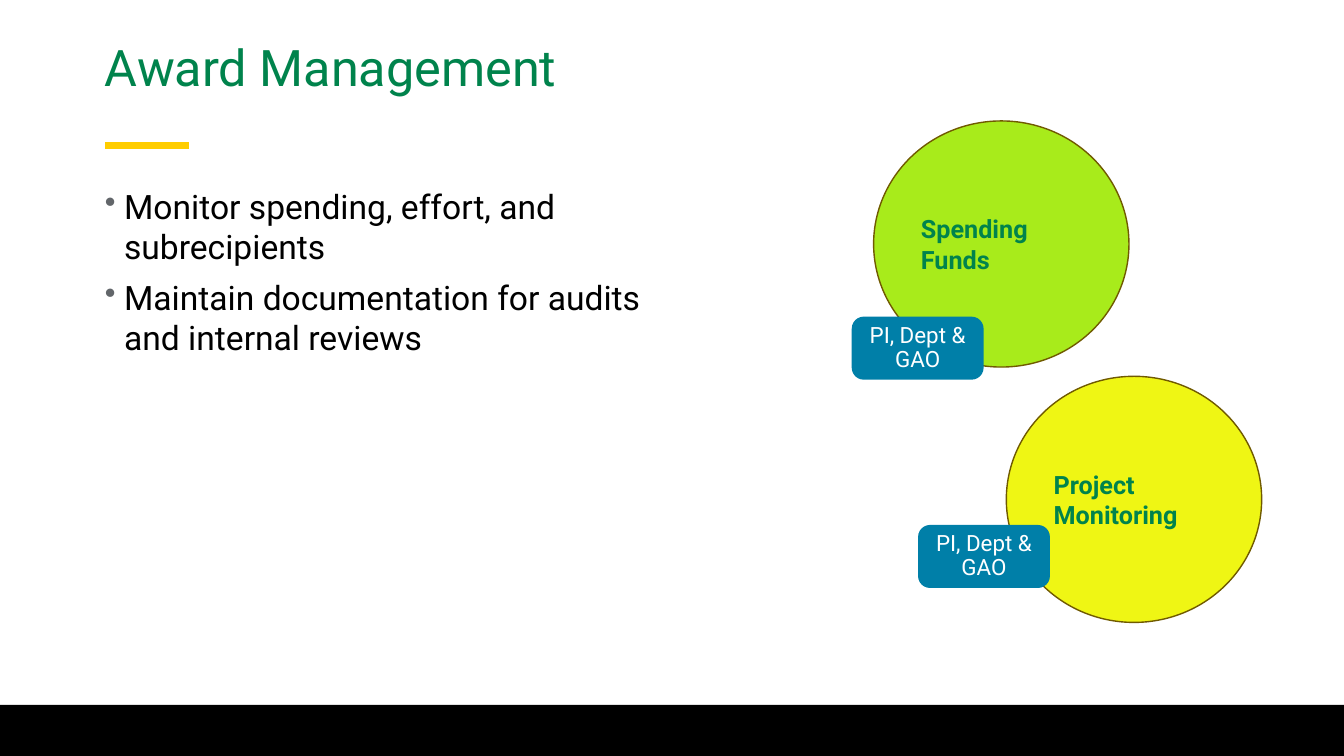
from dataclasses import dataclass

from lxml.etree import SubElement
from pptx import Presentation
from pptx.dml.color import RGBColor
from pptx.enum.shapes import MSO_CONNECTOR, MSO_SHAPE
from pptx.enum.text import MSO_ANCHOR, PP_ALIGN
from pptx.oxml.ns import qn
from pptx.util import Inches, Pt

SLIDE_WIDTH, SLIDE_HEIGHT = Inches(13.33), Inches(7.5)
COLUMNS, ROWS = 16, 9
MARGIN = 1.25  # columns
FONT = "Roboto"

GREEN = RGBColor(0x00, 0x83, 0x4C)
GOLD = RGBColor(0xFF, 0xCD, 0x00)
BLACK = RGBColor(0x00, 0x00, 0x00)
WHITE = RGBColor(0xFF, 0xFF, 0xFF)
LIME = RGBColor(0xA8, 0xEB, 0x1B)
YELLOW = RGBColor(0xEF, 0xF6, 0x14)
OLIVE = RGBColor(0x70, 0x5A, 0x00)
BLUE = RGBColor(0x00, 0x7F, 0xA8)
BULLET_GREY = "62666A"


@dataclass
class Area:
    """A rectangle in grid columns and rows."""
    column: float
    row: float
    columns: float
    rows: float

    def lengths(self) -> tuple[int, int, int, int]:
        return (across(self.column), down(self.row),
                across(self.columns), down(self.rows))


@dataclass
class Stage:
    """A circle for one stage, with a tag naming who is responsible."""
    label: str
    fill: RGBColor
    circle: Area
    tag: Area


BULLETS = ["Monitor spending, effort, and subrecipients",
           "Maintain documentation for audits and internal reviews"]
OWNERS = "PI, Dept & GAO"
STAGES = [
    Stage("Spending Funds", LIME,
          Area(10.4, 1.44, 3.04, 2.93), Area(10.14, 3.77, 1.57, 0.75)),
    Stage("Project Monitoring", YELLOW,
          Area(11.98, 4.48, 3.04, 2.93), Area(10.93, 6.25, 1.57, 0.75)),
]


def across(columns: float) -> int:
    return round(SLIDE_WIDTH * columns / COLUMNS)


def down(rows: float) -> int:
    return round(SLIDE_HEIGHT * rows / ROWS)


def set_margins(frame, margin: float) -> None:
    frame.margin_left = frame.margin_right = Inches(margin)
    frame.margin_top = frame.margin_bottom = Inches(margin)


def format_text(frame, size: float, color: RGBColor, bold: bool = False,
                align: PP_ALIGN = PP_ALIGN.LEFT, spacing: float = 1.0) -> None:
    frame.word_wrap = True
    for para in frame.paragraphs:
        para.alignment = align
        para.line_spacing = spacing
        for span in para.runs:
            span.font.name = FONT
            span.font.size = Pt(size)
            span.font.bold = bold
            span.font.color.rgb = color


def add_bullet(para) -> None:
    properties = para._p.get_or_add_pPr()
    properties.set("marL", str(Inches(0.19)))
    properties.set("indent", str(-Inches(0.19)))
    color = SubElement(properties, qn("a:buClr"))
    SubElement(color, qn("a:srgbClr"), val=BULLET_GREY)
    SubElement(properties, qn("a:buSzPct"), val="95000")
    SubElement(properties, qn("a:buChar"), char="•")


def add_filled(page, kind: MSO_SHAPE, area: Area, fill: RGBColor):
    shape = page.shapes.add_shape(kind, *area.lengths())
    shape.shadow.inherit = False
    shape.fill.solid()
    shape.fill.fore_color.rgb = fill
    shape.line.fill.background()
    return shape


def add_accent(page) -> None:
    height = down(1.73)
    accent = page.shapes.add_connector(
        MSO_CONNECTOR.STRAIGHT, across(MARGIN), height, across(MARGIN + 1), height)
    accent.line.color.rgb = GOLD
    accent.line.width = Pt(5)
    SubElement(accent._element.spPr, qn("a:effectLst"))


def add_title(page) -> None:
    box = page.shapes.add_textbox(*Area(MARGIN, 0.26, 13.5, 1.14).lengths())
    frame = box.text_frame
    frame.text = "Award Management"
    frame.vertical_anchor = MSO_ANCHOR.MIDDLE
    set_margins(frame, 0)
    format_text(frame, 36, GREEN, spacing=0.9)


def add_body(page) -> None:
    box = page.shapes.add_textbox(*Area(MARGIN, 2.21, 7.13, 5.59).lengths())
    frame = box.text_frame
    frame.text = "\n".join(BULLETS)
    set_margins(frame, 0)
    for para in frame.paragraphs:
        add_bullet(para)
    for para in frame.paragraphs[1:]:
        para.space_before = Pt(7.5)
    format_text(frame, 24, BLACK)


def add_circle(page, stage: Stage) -> None:
    circle = add_filled(page, MSO_SHAPE.OVAL, stage.circle, stage.fill)
    circle.line.color.rgb = OLIVE
    circle.line.width = Pt(1)
    circle.text_frame.text = stage.label
    circle.text_frame.vertical_anchor = MSO_ANCHOR.MIDDLE
    format_text(circle.text_frame, 18, GREEN, bold=True)


def add_tag(page, stage: Stage) -> None:
    tag = add_filled(page, MSO_SHAPE.ROUNDED_RECTANGLE, stage.tag, BLUE)
    tag.adjustments[0] = 0.19
    tag.text_frame.text = OWNERS
    tag.text_frame.vertical_anchor = MSO_ANCHOR.MIDDLE
    set_margins(tag.text_frame, 0.12)
    format_text(tag.text_frame, 16, WHITE, align=PP_ALIGN.CENTER, spacing=0.9)


def main() -> None:
    deck = Presentation()
    deck.slide_width, deck.slide_height = SLIDE_WIDTH, SLIDE_HEIGHT
    page = deck.slides.add_slide(deck.slide_layouts[6])
    add_accent(page)
    add_filled(page, MSO_SHAPE.RECTANGLE, Area(0, 8.39, COLUMNS, 0.61), BLACK)
    add_title(page)
    add_body(page)
    for stage in STAGES:
        add_circle(page, stage)
    for stage in STAGES:
        add_tag(page, stage)
    deck.save("out.pptx")


if __name__ == "__main__":
    main()
